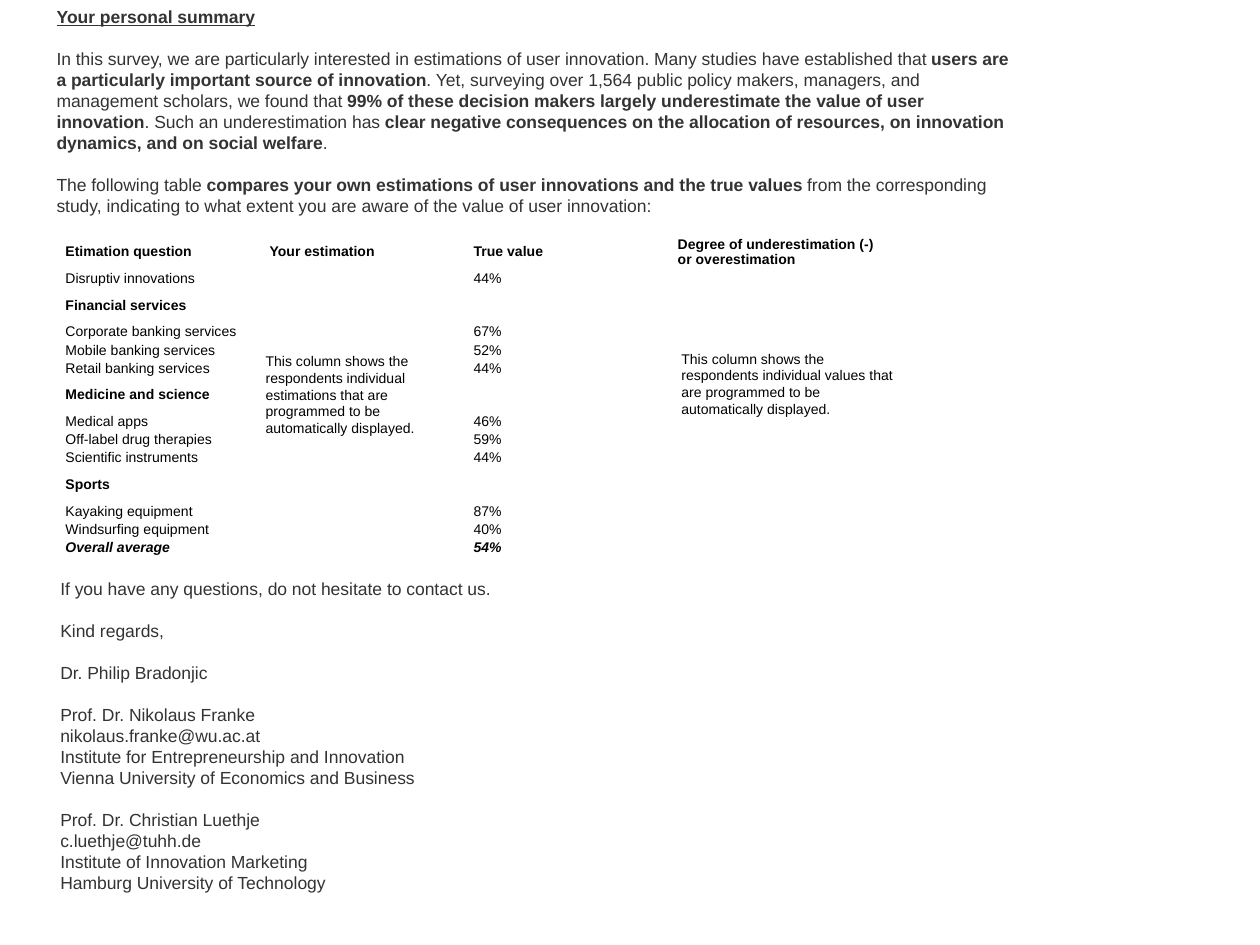
from pptx import Presentation
from pptx.dml.color import RGBColor
from pptx.enum.text import MSO_ANCHOR, MSO_AUTO_SIZE, PP_ALIGN
from pptx.util import Inches, Pt

FONT = "Arial"
GREY, BLACK, WHITE = "333333", "000000", "FFFFFF"
TEXT_SIZE, TABLE_SIZE = 10, 8
GROUP_GAP = 12
COLUMN_WIDTH, TALL_ROW, LOW_ROW = 1.62, 0.28, 0.144

# Within a paragraph, every second piece is bold.
INTRODUCTION = [
    ["In this survey, we are particularly interested in estimations of user innovation. "
     "Many studies have established that ",
     "users are a particularly important source of innovation",
     ". Yet, surveying over 1,564 public policy makers, managers, and management scholars, "
     "we found that ",
     "99% of these decision makers largely underestimate the value of user innovation",
     ". Such an underestimation has ",
     "clear negative consequences on the allocation of resources, on innovation dynamics, "
     "and on social welfare",
     "."],
    ["The following table ",
     "compares your own estimations of user innovations and the true values ",
     "from the corresponding study, indicating to what extent you are aware of the value "
     "of user innovation:"],
]

HEADER = ["Etimation question", "Your estimation", "True value",
          "Degree of underestimation (-) or overestimation"]
# A row without a true value is a section heading.
ROWS = [
    ("Disruptiv innovations", "44%"),
    ("Financial services", ""),
    ("Corporate banking services", "67%"),
    ("Mobile banking services", "52%"),
    ("Retail banking services", "44%"),
    ("Medicine and science", ""),
    ("Medical apps", "46%"),
    ("Off-label drug therapies", "59%"),
    ("Scientific instruments", "44%"),
    ("Sports", ""),
    ("Kayaking equipment", "87%"),
    ("Windsurfing equipment", "40%"),
    ("Overall average", "54%"),
]

NOTE = "This column shows the respondents individual {} that are programmed to be automatically displayed."

CLOSING = [
    ["If you have any questions, do not hesitate to contact us."],
    ["Kind regards,"],
    ["Dr. Philip Bradonjic"],
    ["Prof. Dr. Nikolaus Franke", "nikolaus.franke@wu.ac.at",
     "Institute for Entrepreneurship and Innovation",
     "Vienna University of Economics and Business"],
    ["Prof. Dr. Christian Luethje", "c.luethje@tuhh.de",
     "Institute of Innovation Marketing", "Hamburg University of Technology"],
]


def color(hex_string):
    return RGBColor.from_string(hex_string)


def style(font, size, hex_string, bold=None, italic=None):
    font.name, font.size = FONT, Pt(size)
    font.color.rgb = color(hex_string)
    font.bold, font.italic = bold, italic


def place(shape, left, top, width, height):
    shape.left, shape.top = Inches(left), Inches(top)
    shape.width, shape.height = Inches(width), Inches(height)


def add_text(page, area, groups, size, hex_string):
    """Add a box of paragraph groups; a paragraph is a list of pieces, every second one bold."""
    box = page.shapes.add_textbox(*map(Inches, area))
    frame = box.text_frame
    frame.word_wrap = True
    para = frame.paragraphs[0]
    for group_index, group in enumerate(groups):
        for line_index, pieces in enumerate(group):
            if group_index or line_index:
                para = frame.add_paragraph()
            if group_index and not line_index:
                para.space_before = Pt(GROUP_GAP)
            style(para.font, size, hex_string)
            for index, piece in enumerate(pieces):
                span = para.add_run()
                span.text = piece
                if index % 2:
                    span.font.bold = True


def set_title(page, text):
    title = page.shapes.title
    place(title, 0.35, 0, 7.78, 0.27)
    frame = title.text_frame
    frame.text = text
    frame.auto_size = MSO_AUTO_SIZE.NONE
    frame.vertical_anchor = MSO_ANCHOR.TOP
    frame.margin_top, frame.margin_bottom = Inches(0.05), 0
    para = frame.paragraphs[0]
    para.alignment = PP_ALIGN.LEFT
    para.line_spacing = 1
    style(para.font, TEXT_SIZE, GREY, bold=True)
    para.font.underline = True


def fill_cell(cell, text, bold, italic):
    cell.fill.solid()
    cell.fill.fore_color.rgb = color(WHITE)
    cell.vertical_anchor = MSO_ANCHOR.MIDDLE
    cell.margin_left = cell.margin_right = Inches(0.01)
    cell.margin_top = cell.margin_bottom = 0
    cell.text = text
    style(cell.text_frame.paragraphs[0].font, TABLE_SIZE, BLACK, bold, italic)


def add_estimation_table(page, left, top):
    rows = [HEADER] + [[question, "", value, ""] for question, value in ROWS]
    heights = [TALL_ROW if row is HEADER or not row[2] else LOW_ROW for row in rows]
    table = page.shapes.add_table(
        len(rows), len(HEADER), Inches(left), Inches(top),
        Inches(COLUMN_WIDTH * len(HEADER)), Inches(sum(heights))).table
    table.first_row = table.horz_banding = False
    for column in table.columns:
        column.width = Inches(COLUMN_WIDTH)
    for index, (row, height) in enumerate(zip(rows, heights)):
        table.rows[index].height = Inches(height)
        is_average = index == len(rows) - 1
        for column, text in enumerate(row):
            fill_cell(table.cell(index, column), text,
                      bold=height == TALL_ROW or is_average, italic=is_average)


def main():
    deck = Presentation()
    deck.slide_width, deck.slide_height = Inches(10), Inches(7.5)
    page = deck.slides.add_slide(deck.slide_layouts[5])

    set_title(page, "Your personal summary")
    add_text(page, (0.35, 0.33, 7.78, 1.45), [[pieces] for pieces in INTRODUCTION],
             TEXT_SIZE, GREY)
    add_estimation_table(page, 0.51, 1.86)
    add_text(page, (2.01, 2.75, 1.5, 0.77), [[[NOTE.format("estimations")]]],
             TABLE_SIZE, BLACK)
    add_text(page, (5.31, 2.73, 1.97, 0.64), [[[NOTE.format("values")]]],
             TABLE_SIZE, BLACK)
    add_text(page, (0.38, 4.54, 7.15, 2.63),
             [[[line] for line in group] for group in CLOSING], TEXT_SIZE, GREY)

    deck.save("out.pptx")


if __name__ == "__main__":
    main()
